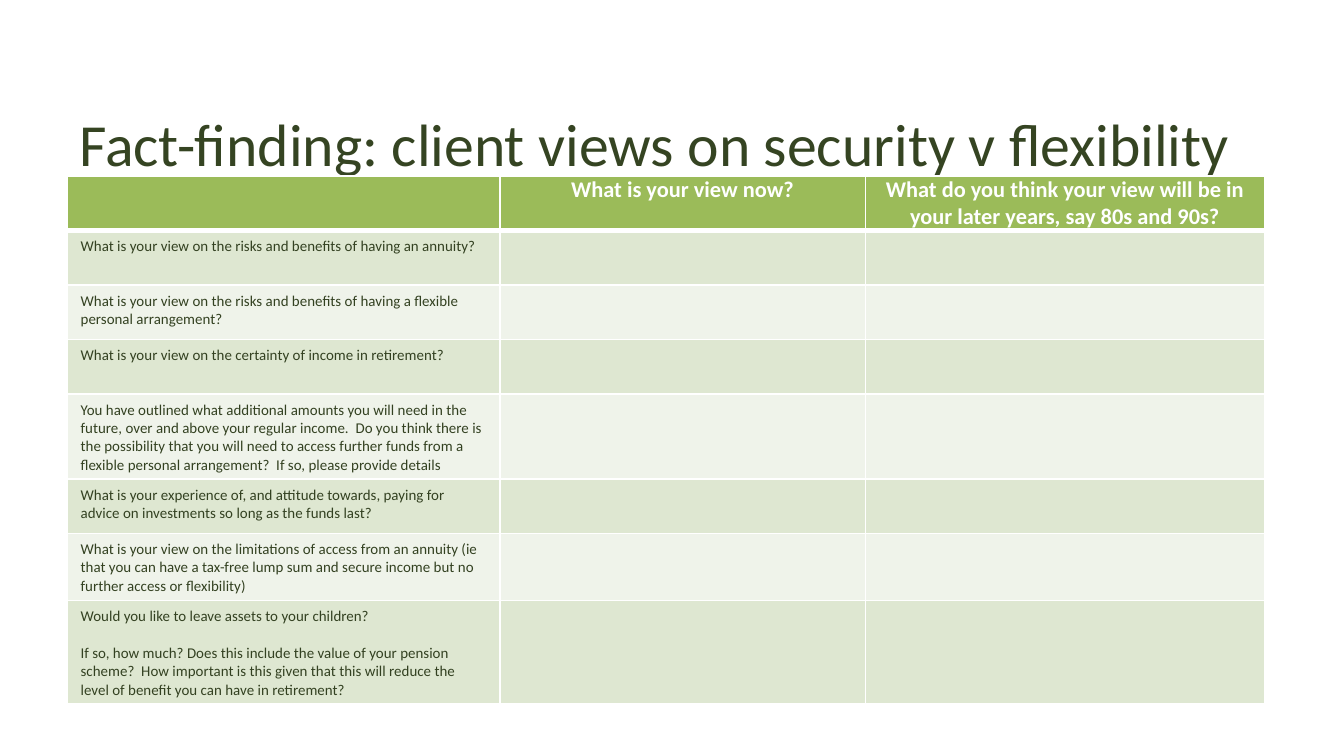
from dataclasses import dataclass

import pptx
import pptx.dml.color
import pptx.enum.text
import pptx.oxml
import pptx.oxml.ns
import pptx.util

Inches = pptx.util.Inches
Pt = pptx.util.Pt
RGBColor = pptx.dml.color.RGBColor
PP_ALIGN = pptx.enum.text.PP_ALIGN

FONT = "Calibri"
WHITE = RGBColor(0xFF, 0xFF, 0xFF)
TITLE_GREEN = RGBColor(0x35, 0x44, 0x22)
TEXT_GREEN = RGBColor(0x33, 0x41, 0x21)
HEADER_GREEN = RGBColor(0x9B, 0xBB, 0x59)
BANDS = (RGBColor(0xDE, 0xE7, 0xD1), RGBColor(0xEF, 0xF3, 0xEA))

SLIDE_WIDTH = 10
QUESTION_SIZE = 8
COLUMN_WIDTHS = (3.22, 2.72, 2.97)
ROW_HEIGHT = 29.2 / 72  # minimum; rows grow with their text
TABLE_HEIGHT = 3.93


@dataclass
class Heading:
    text: str
    side_margin: float


@dataclass
class Question:
    paragraphs: tuple[str, ...]


HEADINGS = (
    Heading("", 0.1),
    Heading("What is your view now?", 0.01),
    Heading("What do you think your view will be in your later years, say 80s and 90s?", 0.07),
)

QUESTIONS = (
    Question(("What is your view on the risks and benefits of having an annuity?",)),
    Question(("What is your view on the risks and benefits of having a flexible personal arrangement?",)),
    Question(("What is your view on the certainty of income in retirement?",)),
    Question((
        "You have outlined what additional amounts you will need in the future, over and above "
        "your regular income.  Do you think there is the possibility that you will need to access "
        "further funds from a flexible personal arrangement?  If so, please provide details",
    )),
    Question((
        "What is your experience of, and attitude towards, paying for advice on investments "
        "so long as the funds last?",
    )),
    Question((
        "What is your view on the limitations of access from an annuity (ie that you can have "
        "a tax-free lump sum and secure income but no further access or flexibility)",
    )),
    Question((
        "Would you like to leave assets to your children?",
        "If so, how much? Does this include the value of your pension scheme?  How important is "
        "this given that this will reduce the level of benefit you can have in retirement?",
    )),
)


def style(p, size: float, color: RGBColor, bold: bool = False) -> None:
    p.font.name = FONT
    p.font.size = Pt(size)
    p.font.color.rgb = color
    p.font.bold = bold


def format_cell(cell, fill: RGBColor, top: float = 1, bottom: float = 1) -> None:
    """Set white borders, with widths in points, and a solid fill."""
    tc_pr = cell._tc.get_or_add_tcPr()
    for side, width in (("L", 1), ("R", 1), ("T", top), ("B", bottom)):
        tc_pr.append(pptx.oxml.parse_xml(
            f'<a:ln{side} {pptx.oxml.ns.nsdecls("a")} w="{Pt(width)}">'
            f'<a:solidFill><a:srgbClr val="{WHITE}"/></a:solidFill></a:ln{side}>'
        ))
    cell.fill.solid()
    cell.fill.fore_color.rgb = fill


def add_title(s, text: str) -> None:
    tf = s.shapes.add_textbox(Inches(0.5), Inches(0.59), Inches(9), Inches(0.94)).text_frame
    tf.word_wrap = True
    tf.vertical_anchor = pptx.enum.text.MSO_ANCHOR.MIDDLE
    tf.margin_left = tf.margin_right = Inches(0.09)
    tf.margin_top = tf.margin_bottom = Inches(0.04)
    p = tf.paragraphs[0]
    p.text = text
    style(p, 32, TITLE_GREEN)


def fill_heading(cell, heading: Heading) -> None:
    format_cell(cell, HEADER_GREEN, bottom=3)
    cell.margin_left = cell.margin_right = Inches(heading.side_margin)
    cell.margin_top = cell.margin_bottom = 0
    p = cell.text_frame.paragraphs[0]
    p.text = heading.text
    p.alignment = PP_ALIGN.CENTER
    style(p, 12, WHITE, bold=True)


def fill_body(cell, paragraphs: tuple[str, ...]) -> None:
    tf = cell.text_frame
    for i, text in enumerate(paragraphs):
        p = tf.add_paragraph() if i else tf.paragraphs[0]
        p.text = text
        if i:
            p.space_before = Pt(9.8)
        style(p, QUESTION_SIZE, TEXT_GREEN)


def add_question_table(s) -> None:
    frame = s.shapes.add_table(
        len(QUESTIONS) + 1, len(COLUMN_WIDTHS), Inches(0.5), Inches(1.31),
        Inches(sum(COLUMN_WIDTHS)), Inches(TABLE_HEIGHT),
    )
    table = frame.table
    for column, width in zip(table.columns, COLUMN_WIDTHS):
        column.width = Inches(width)
    for row in table.rows:
        row.height = Inches(ROW_HEIGHT)
    frame.height = Inches(TABLE_HEIGHT)
    for col, heading in enumerate(HEADINGS):
        fill_heading(table.cell(0, col), heading)
    for row, question in enumerate(QUESTIONS, start=1):
        for col in range(len(COLUMN_WIDTHS)):
            cell = table.cell(row, col)
            format_cell(cell, BANDS[(row - 1) % 2], top=3 if row == 1 else 1)
            if col == 0:
                fill_body(cell, question.paragraphs)
            else:
                style(cell.text_frame.paragraphs[0], QUESTION_SIZE, TEXT_GREEN)


def main() -> None:
    prs = pptx.Presentation()
    prs.slide_width = Inches(SLIDE_WIDTH)
    prs.slide_height = Inches(SLIDE_WIDTH * 9 / 16)
    s = prs.slides.add_slide(prs.slide_layouts[6])
    add_title(s, "Fact-finding: client views on security v flexibility")
    add_question_table(s)
    prs.save("out.pptx")


if __name__ == "__main__":
    main()
